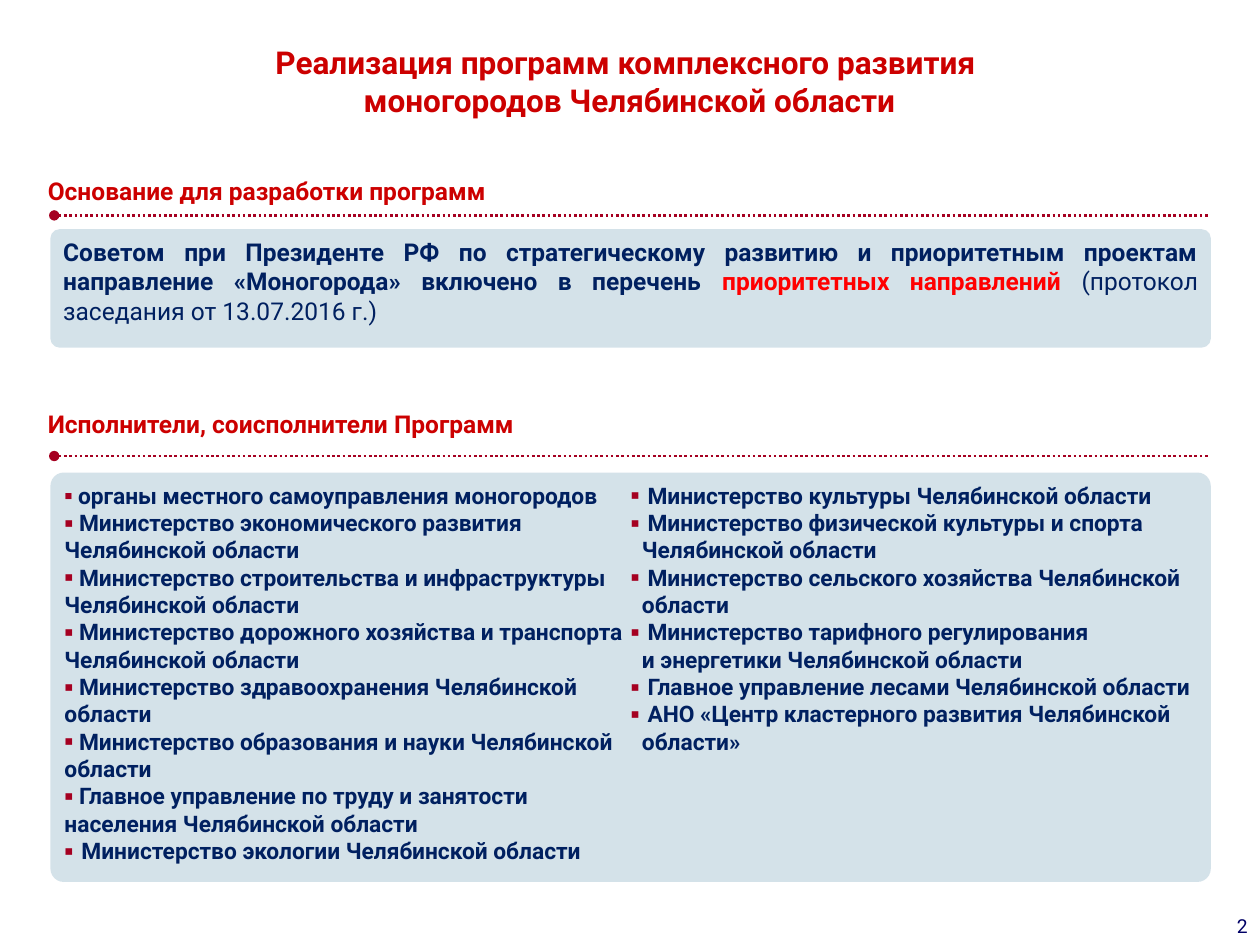
from copy import deepcopy
from lxml.etree import SubElement
from pptx import Presentation
from pptx.dml.color import RGBColor
from pptx.enum.dml import MSO_LINE_DASH_STYLE as Dash
from pptx.enum.shapes import MSO_CONNECTOR as Connector, MSO_SHAPE as Shape
from pptx.enum.text import MSO_ANCHOR as Anchor, PP_ALIGN as Align
from pptx.oxml.ns import qn
from pptx.util import Pt

RED, BRIGHT_RED, DARK_RED = "CC0000", "FF0000", "A50021"
NAVY, NUMBER_BLUE, PANEL_BLUE, WHITE = "002060", "000066", "ABC6D5", "FFFFFF"


def color(value):
    return RGBColor.from_string(value)


def write(paragraph, text, size=14, fill=NAVY, bold=True, align=None):
    """Add formatted text; a newline becomes a line break of the same size."""
    if align is not None:
        paragraph.alignment = align
    for index, line in enumerate(text.split("\n")):
        if index:
            paragraph.add_line_break()
        run = paragraph.add_run()
        run.text = line
        run.font.name, run.font.size, run.font.bold = "Roboto", Pt(size), bold
        run.font.color.rgb = color(fill)
        if index:
            run._r.getprevious().append(deepcopy(run._r.rPr))


presentation = Presentation()
presentation.slide_width, presentation.slide_height = Pt(720), Pt(540)
slide = presentation.slides.add_slide(presentation.slide_layouts[6])
shapes = slide.shapes

# Title, page number and section headings
labels = [
    ((110.2, 20.9, 499, 51.1),
     "Реализация программ комплексного развития \nмоногородов Челябинской области",
     dict(size=18, fill=RED, align=Align.CENTER)),
    ((677.5, 519.1, 42.5, 20.9), "2",
     dict(size=11, fill=NUMBER_BLUE, bold=False, align=Align.RIGHT)),
    ((20.2, 97.2, 402.5, 24.5), "Основание для разработки программ", dict(fill=RED)),
    ((20.2, 230.4, 402.5, 28), "Исполнители, соисполнители Программ", dict(fill=RED)),
]

# Section frames and panels: left, top, width, height, corner, fill
panels = []
for left, top, width, height, corner, fill in [
    (20.2, 97.2, 680.4, 110.9, 0.057, WHITE),
    (28.8, 131, 663.1, 67.7, 0.077, PANEL_BLUE),
    (20.2, 230.4, 680.4, 283.7, 0.028, WHITE),
    (28.8, 270, 663.1, 234, 0.033, PANEL_BLUE),
]:
    panel = shapes.add_shape(Shape.ROUNDED_RECTANGLE, Pt(left), Pt(top), Pt(width), Pt(height))
    panel.adjustments[0] = corner
    panel.shadow.inherit = False
    panel.fill.solid()
    panel.fill.fore_color.rgb = color(fill)
    hue = panel.fill._xPr.find(qn("a:solidFill"))[0]
    SubElement(hue, qn("a:alpha"), val="50000")
    panel.line.fill.background()
    frame = panel.text_frame
    frame.word_wrap, frame.vertical_anchor = True, Anchor.TOP
    frame.margin_left = frame.margin_right = Pt(5.8)
    frame.margin_top = frame.margin_bottom = Pt(2.9)
    panels.append(panel)

for box, text, style in labels:
    label = shapes.add_textbox(*map(Pt, box))
    label.text_frame.word_wrap = True
    write(label.text_frame.paragraphs[0], text, **style)

# Dotted rules with a round start
for top in (123.1, 260.6):
    rule = shapes.add_connector(Connector.STRAIGHT, Pt(31), Pt(top), Pt(691.2), Pt(top))
    rule.line.color.rgb = color(DARK_RED)
    rule.line.width = Pt(1.5)
    rule.line.dash_style = Dash.ROUND_DOT
    SubElement(rule.line._get_or_add_ln(), qn("a:headEnd"), type="oval")
    SubElement(rule._element.spPr, qn("a:effectLst"))

# Basis for the programmes
basis = panels[1].text_frame.paragraphs[0]
write(basis, "Советом при Президенте РФ по стратегическому развитию и приоритетным проектам "
      "направление «Моногорода» включено в перечень ", align=Align.JUSTIFY)
write(basis, "приоритетных направлений ", fill=BRIGHT_RED)
write(basis, "(протокол заседания от 13.07.2016 г.)", bold=False)

# Bodies carrying out the programmes, in two columns
bodies = [
    "органы местного самоуправления моногородов",
    "Министерство экономического развития Челябинской области",
    "Министерство строительства и инфраструктуры Челябинской области",
    "Министерство дорожного хозяйства и транспорта Челябинской области",
    "Министерство здравоохранения Челябинской области",
    "Министерство образования и науки Челябинской области",
    "Главное управление по труду и занятости населения Челябинской области",
    "Министерство экологии Челябинской области",
    "Министерство культуры Челябинской области",
    "Министерство физической культуры и спорта Челябинской области",
    "Министерство сельского хозяйства Челябинской области",
    "Министерство тарифного регулирования \nи энергетики Челябинской области",
    "Главное управление лесами Челябинской области",
    "АНО «Центр кластерного развития Челябинской области»",
]
FIRST_HANGING = 7
frame = panels[3].text_frame
frame._txBody.bodyPr.set("numCol", "2")
for index, body in enumerate(bodies):
    paragraph = frame.paragraphs[0] if index == 0 else frame.add_paragraph()
    properties = paragraph._p.get_or_add_pPr()
    indent = Pt(6.5) if index >= FIRST_HANGING else 0
    properties.set("marL", str(int(indent)))
    properties.set("indent", str(-int(indent)))
    bullet_color = SubElement(properties, qn("a:buClr"))
    SubElement(bullet_color, qn("a:srgbClr"), val=DARK_RED)
    SubElement(properties, qn("a:buFont"), typeface="Roboto")
    SubElement(properties, qn("a:buChar"), char="▪")
    # The first item opens with a smaller space, which also sizes its bullet
    write(paragraph, " ", size=13 if index else 12)
    write(paragraph, body, size=13, align=Align.LEFT)

presentation.save("out.pptx")
